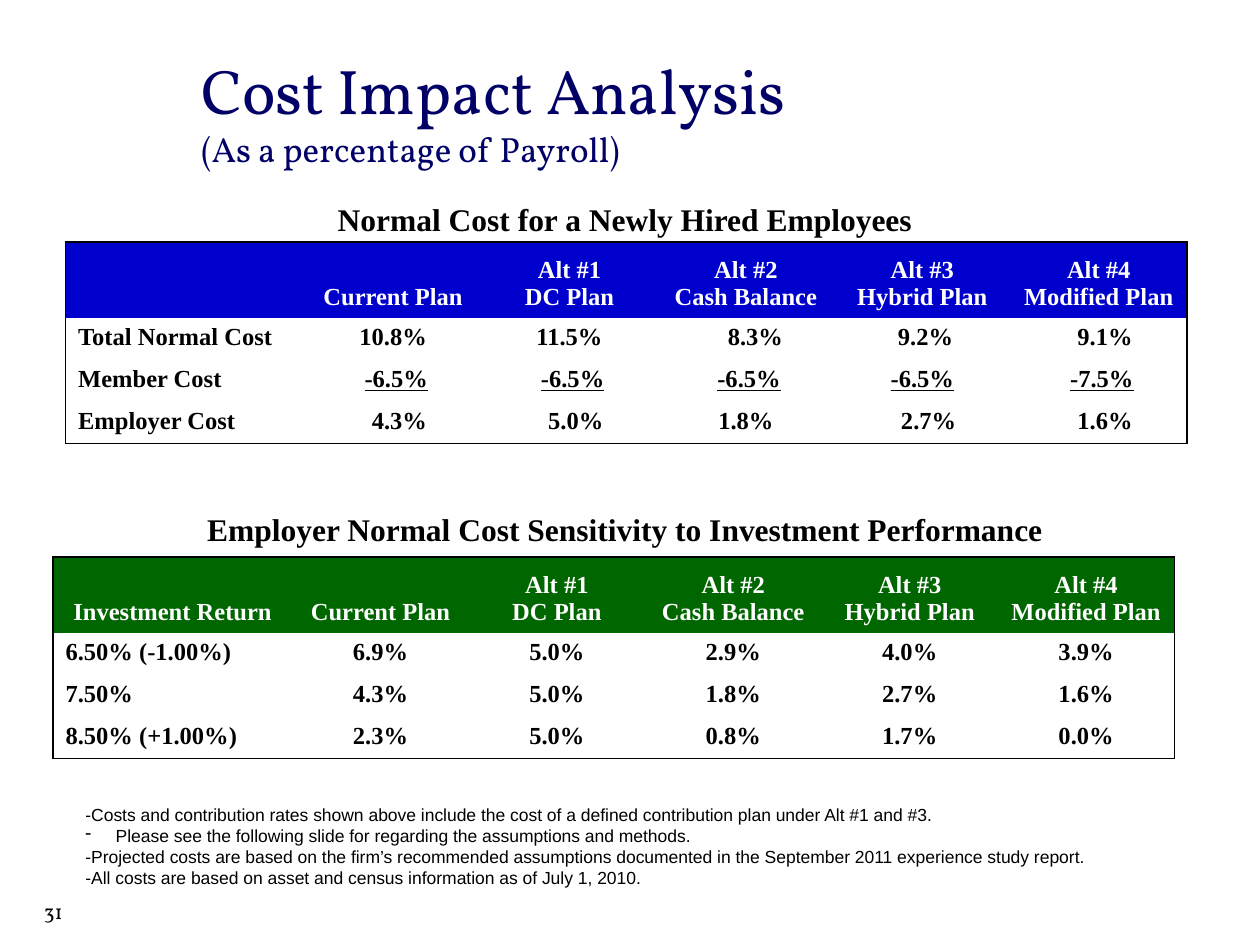
from lxml.etree import SubElement
from pptx import Presentation
from pptx.dml.color import RGBColor
from pptx.enum.text import MSO_ANCHOR as Anchor, PP_ALIGN as Align
from pptx.oxml import parse_xml
from pptx.oxml.ns import nsdecls, qn
from pptx.util import Inches, Pt

# Content
COLORS = {"navy": "000066", "blue": "0000CC", "green": "006600",
          "black": "000000", "white": "FFFFFF"}
SERIF, SANS, DISPLAY = "Times New Roman", "Arial", "Vollkorn"
TITLE = ("Cost Impact Analysis", "(As a percentage of Payroll)")
PLANS = ["Current Plan", "Alt #1\nDC Plan", "Alt #2\nCash Balance",
         "Alt #3\nHybrid Plan", "Alt #4\nModified Plan"]
TABLES = [
    {"heading": "Normal Cost for a Newly Hired Employees", "heading_top": 1.54,
     "left": 0.52, "top": 1.92, "color": "blue", "corner": "",
     "rows": [("Total Normal Cost", "10.8%", "11.5%", "8.3%", "9.2%", "9.1%"),
              ("Member Cost", "-6.5%", "-6.5%", "-6.5%", "-6.5%", "-7.5%"),
              ("Employer Cost", "4.3%", "5.0%", "1.8%", "2.7%", "1.6%")],
     "underlined": "Member Cost",
     # Extra left margin of each value, in steps
     "shifts": [(0, 0, 3, 1, 2), (1, 1, 1, 0, 1), (2, 2, 0, 2, 2)]},
    {"heading": "Employer Normal Cost Sensitivity to Investment Performance",
     "heading_top": 4, "left": 0.42, "top": 4.42, "color": "green",
     "corner": "Investment Return",
     "rows": [("6.50% (-1.00%)", "6.9%", "5.0%", "2.9%", "4.0%", "3.9%"),
              ("7.50%", "4.3%", "5.0%", "1.8%", "2.7%", "1.6%"),
              ("8.50% (+1.00%)", "2.3%", "5.0%", "0.8%", "1.7%", "0.0%")],
     "underlined": None, "shifts": [(0,) * 5] * 3},
]
NOTES = [
    "-Costs and contribution rates shown above include the cost of a defined "
    "contribution plan under Alt #1 and #3.",
    "Please see the following slide for regarding the assumptions and methods.",
    "-Projected costs are based on the firm’s recommended assumptions documented in "
    "the September 2011 experience study report.",
    "-All costs are based on asset and census information as of July 1, 2010.",
]
BULLETED_NOTE = 1
PAGE = "31"

# Layout, in inches
LABEL_W, PLAN_W = 1.9, 1.4
HEAD_H, ROW_H = 0.6, 0.3
PAD, SHIFT = 0.1, 0.05


def rgb(name):
    return RGBColor.from_string(COLORS[name])


def write(p, text, size=14, font=SERIF, color="black", bold=False,
          underline=False, align=None):
    if align is not None:
        p.alignment = align
    r = p.add_run()
    r.text = text
    f = r.font
    f.size, f.name, f.bold = Pt(size), font, bold
    f.underline = underline or None
    f.color.rgb = rgb(color)


def add_box(s, left, top, width, height, anchor=Anchor.TOP):
    tf = s.shapes.add_textbox(*map(Inches, (left, top, width, height))).text_frame
    tf.word_wrap = True
    tf.vertical_anchor = anchor
    return tf


def set_borders(cell, sides):
    """Draw a 1 pt line on the given sides and none on the others."""
    tc_pr = cell._tc.get_or_add_tcPr()
    for i, side in enumerate("LRTB"):
        fill = (f'<a:solidFill><a:srgbClr val="{COLORS["black"]}"/></a:solidFill>'
                if side in sides else "<a:noFill/>")
        tc_pr.insert(i, parse_xml(
            f'<a:ln{side} {nsdecls("a")} w="{Pt(1)}">{fill}</a:ln{side}>'))


def add_cost_table(s, data):
    grid = [[data["corner"], *PLANS], *data["rows"]]
    n_rows, n_cols = len(grid), len(grid[0])
    widths = [LABEL_W] + [PLAN_W] * len(PLANS)
    heights = [HEAD_H] + [ROW_H] * len(data["rows"])
    table = s.shapes.add_table(
        n_rows, n_cols, Inches(data["left"]), Inches(data["top"]),
        Inches(sum(widths)), Inches(sum(heights))).table
    table.horz_banding = False
    for col, w in zip(table.columns, widths):
        col.width = Inches(w)
    for row, h in zip(table.rows, heights):
        row.height = Inches(h)

    for i, line in enumerate(grid):
        for j, text in enumerate(line):
            cell, head = table.cell(i, j), i == 0
            cell.fill.solid()
            cell.fill.fore_color.rgb = rgb(data["color"] if head else "white")
            edges = {"L": j == 0, "R": j == n_cols - 1,
                     "T": head, "B": i == n_rows - 1}
            set_borders(cell, [side for side, outer in edges.items() if outer])
            cell.vertical_anchor = Anchor.BOTTOM if head else Anchor.TOP
            if j and not head:
                cell.margin_left = Inches(PAD + SHIFT * data["shifts"][i - 1][j - 1])
            tf = cell.text_frame
            for k, part in enumerate(text.split("\n") if text else []):
                write(tf.add_paragraph() if k else tf.paragraphs[0], part, bold=True,
                      color="white" if head else "black",
                      underline=j > 0 and line[0] == data["underlined"],
                      align=Align.CENTER if head or j else Align.LEFT)


prs = Presentation()
prs.slide_width, prs.slide_height = Inches(10), Inches(7.5)
s = prs.slides.add_slide(prs.slide_layouts[6])

# Title
p = add_box(s, 1.5, 0.25, 8, 1.25, Anchor.MIDDLE).paragraphs[0]
write(p, TITLE[0], size=36, font=DISPLAY, color="navy")
p.add_line_break()
write(p, TITLE[1], size=20, font=DISPLAY, color="navy")

# Tables with their headings
for data in TABLES:
    add_cost_table(s, data)
    tf = add_box(s, 0.5, data["heading_top"], 8.92, 0.4)
    write(tf.paragraphs[0], data["heading"], size=18, bold=True, align=Align.CENTER)

# Notes
tf = add_box(s, 0.58, 6.33, 9.17, 0.96)
for i, note in enumerate(NOTES):
    p = tf.add_paragraph() if i else tf.paragraphs[0]
    p.line_spacing = Pt(12)
    if i == BULLETED_NOTE:
        p_pr = p._p.get_or_add_pPr()
        p_pr.set("marL", str(Inches(0.24)))
        p_pr.set("indent", str(-Inches(0.24)))
        SubElement(p_pr, qn("a:buChar")).set("char", "-")
    write(p, note, size=10, font=SANS)

# Page number
write(add_box(s, 0.25, 7.08, 0.75, 0.33).paragraphs[0], PAGE, size=12, font=DISPLAY)

prs.save("out.pptx")
